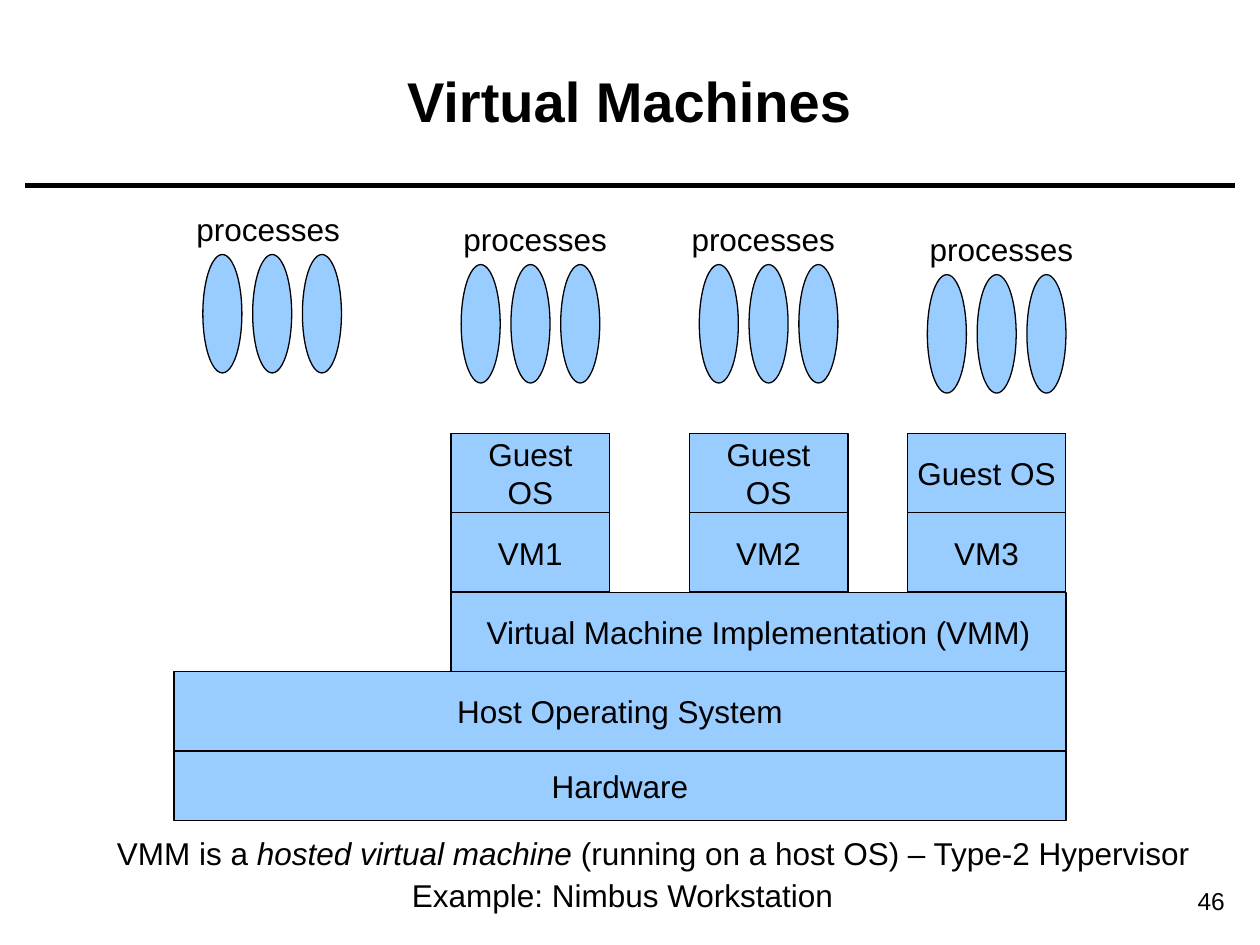
from dataclasses import dataclass

from lxml import etree
from pptx import Presentation
from pptx.dml.color import RGBColor
from pptx.enum.shapes import MSO_CONNECTOR, MSO_SHAPE
from pptx.enum.text import MSO_ANCHOR, MSO_AUTO_SIZE, PP_ALIGN
from pptx.oxml.ns import qn
from pptx.util import Inches, Pt

RECTANGLE, ELLIPSE = MSO_SHAPE.RECTANGLE, MSO_SHAPE.OVAL
STRAIGHT = MSO_CONNECTOR.STRAIGHT
LEFT, CENTER, RIGHT = PP_ALIGN.LEFT, PP_ALIGN.CENTER, PP_ALIGN.RIGHT
TOP, MIDDLE = MSO_ANCHOR.TOP, MSO_ANCHOR.MIDDLE
GROW = MSO_AUTO_SIZE.SHAPE_TO_FIT_TEXT


@dataclass(frozen=True)
class Theme:
    font: str = "Arial"
    ink: RGBColor = RGBColor(0x00, 0x00, 0x00)
    block: RGBColor = RGBColor(0x99, 0xCC, 0xFF)
    title_size: int = 32
    body_size: int = 18
    number_size: int = 14
    outline: float = 0.75
    rule: float = 3


class Deck:
    def __init__(self, theme):
        self.theme = theme
        self.presentation = Presentation()
        self.presentation.slide_width = Inches(10)
        self.presentation.slide_height = Inches(7.5)
        self.slide = self.presentation.slides.add_slide(self.presentation.slide_layouts[6])

    def style(self, paragraph, size, align, bold=False):
        paragraph.alignment = align
        font = paragraph.font
        font.name, font.size, font.bold = self.theme.font, Pt(size), bold
        font.color.rgb = self.theme.ink

    def text(self, box, runs, size, align=LEFT, anchor=TOP, bold=False, grow=False):
        """Add a text box; runs is a list of (words, italic) pairs."""
        frame = self.slide.shapes.add_textbox(*map(Inches, box)).text_frame
        frame.word_wrap = not grow
        if grow:
            frame.auto_size = GROW
        frame.vertical_anchor = anchor
        paragraph = frame.paragraphs[0]
        self.style(paragraph, size, align, bold)
        for words, italic in runs:
            run = paragraph.add_run()
            run.text = words
            if italic:
                run.font.italic = True

    def label(self, box, *runs):
        self.text(box, runs, self.theme.body_size, grow=True)

    def shape(self, preset, box, words=""):
        shape = self.slide.shapes.add_shape(preset, *map(Inches, box))
        shape.shadow.inherit = False
        shape.fill.solid()
        shape.fill.fore_color.rgb = self.theme.block
        shape.line.color.rgb = self.theme.ink
        shape.line.width = Pt(self.theme.outline)
        if words:
            frame = shape.text_frame
            frame.word_wrap = False
            frame.vertical_anchor = MIDDLE
            paragraph = frame.paragraphs[0]
            paragraph.text = words
            self.style(paragraph, self.theme.body_size, CENTER)

    def rule(self, left, right, y):
        line = self.slide.shapes.add_connector(
            STRAIGHT, Inches(left), Inches(y), Inches(right), Inches(y))
        line.line.color.rgb = self.theme.ink
        line.line.width = Pt(self.theme.rule)
        etree.SubElement(line._element.spPr, qn("a:effectLst"))


def draw_layers(deck):
    row_height, guest_top = 0.63, 3.44
    guest_row, vm_row, vmm_row, host_row, hardware_row = (
        guest_top + i * row_height for i in range(5))
    host_left, vmm_left, right = 1.38, 3.58, 8.46

    deck.shape(RECTANGLE, (host_left, hardware_row, right - host_left, 0.55), "Hardware")
    deck.shape(RECTANGLE, (host_left, host_row, right - host_left, row_height),
               "Host Operating System")
    deck.shape(RECTANGLE, (vmm_left, vmm_row, right - vmm_left, row_height),
               "Virtual Machine Implementation (VMM)")

    machines = [(vmm_left, "VM1", "Guest\nOS"), (5.47, "VM2", "Guest\nOS"),
                (7.2, "VM3", "Guest OS")]
    for left, machine, guest in machines:
        deck.shape(RECTANGLE, (left, vm_row, 1.26, row_height), machine)
        deck.shape(RECTANGLE, (left, guest_row, 1.26, row_height), guest)


def draw_processes(deck):
    label_height, pitch = 0.4, 0.395
    groups = [(1.46, 1.61, 1.62), (3.58, 3.66, 1.7), (5.39, 5.55, 1.7), (7.28, 7.36, 1.78)]
    for label_left, first_left, top in groups:
        for i in range(3):
            deck.shape(ELLIPSE, (first_left + i * pitch, top + label_height, 0.31, 0.94))
        deck.label((label_left, top, 1.34, label_height), ("processes", False))


def main():
    theme = Theme()
    deck = Deck(theme)
    deck.rule(0.2, 9.8, 1.47)
    deck.text((8.78, 6.98, 1.04, 0.34), [("46", False)], theme.number_size, RIGHT)
    deck.text((0.35, 0.17, 9.29, 1.25), [("Virtual Machines", False)],
              theme.title_size, CENTER, MIDDLE, bold=True)
    draw_layers(deck)
    draw_processes(deck)
    deck.label((0.83, 6.57, 8.73, 0.4), ("VMM is a ", False),
               ("hosted virtual machine ", True),
               ("(running on a host OS) – Type-2 Hypervisor", False))
    deck.label((3.17, 6.9, 3.72, 0.4), ("Example: Nimbus Workstation", False))
    deck.presentation.save("out.pptx")


if __name__ == "__main__":
    main()
